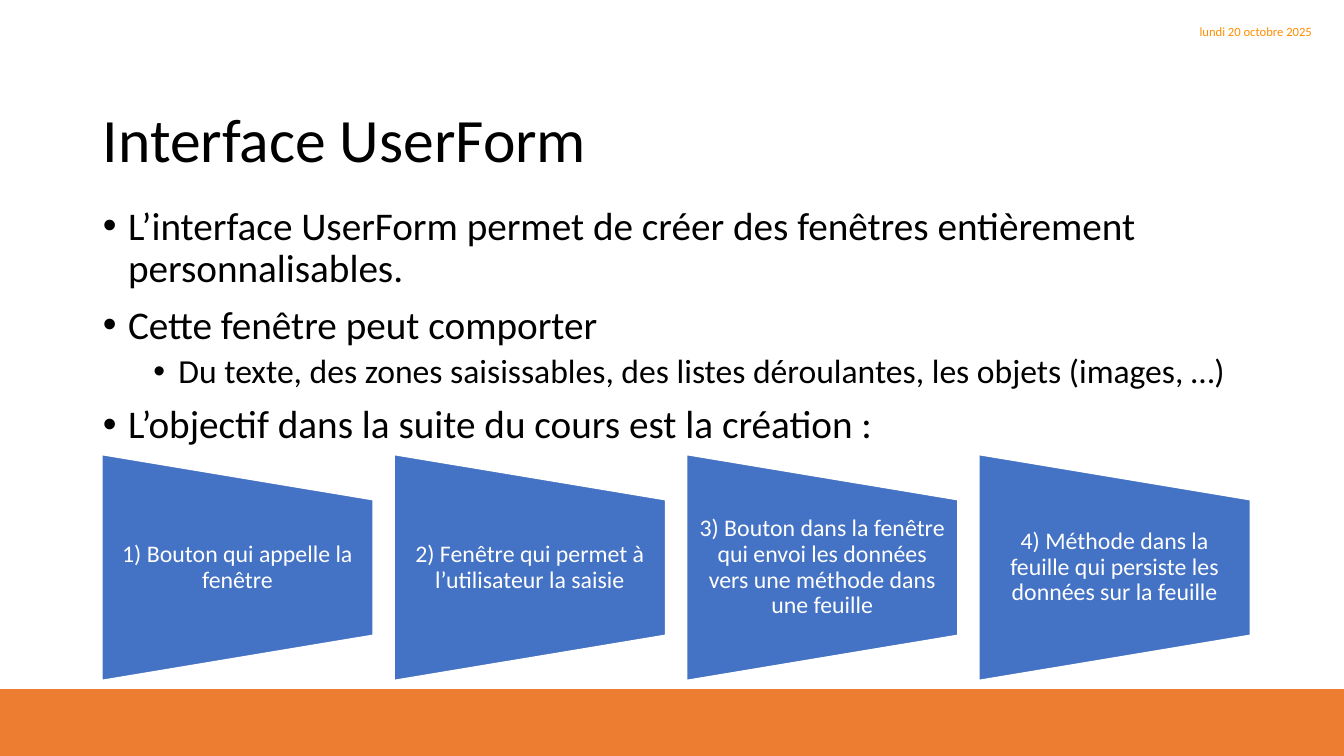
"""Build the UserForm interface slide with its bullet list and four process steps."""
from dataclasses import dataclass
from typing import Optional

import lxml.etree
import pptx
import pptx.dml.color
import pptx.enum.shapes
import pptx.enum.text
import pptx.oxml.ns
import pptx.util

Inches = pptx.util.Inches
Align = pptx.enum.text.PP_ALIGN
Anchor = pptx.enum.text.MSO_ANCHOR
Shapes = pptx.enum.shapes.MSO_SHAPE

COLORS = {
    "band": "ED7D31",
    "date": "FF8E01",
    "text": "000000",
    "step": "4472C4",
    "white": "FFFFFF",
}
FONT = "Calibri"
MARGIN = 0.92
CONTENT_WIDTH = 11.5
STEP_LENGTH, STEP_HEIGHT = 2.69, 2.24
STEP_LEFT, STEP_TOP, STEP_PITCH = 1.01, 4.51, 2.9
LABEL_TOP, LABEL_HEIGHT = 4.95, 1.36


@dataclass
class Bullet:
    """A list entry with its level, size and spacing."""
    text: str
    level: int = 0
    size: int = 28
    space_before: int = 10


@dataclass
class Style:
    """How the text of a box looks."""
    size: int
    color: str
    align: Align = Align.LEFT
    line_spacing: Optional[float] = 0.9


BULLETS = [
    Bullet("L’interface UserForm permet de créer des fenêtres entièrement personnalisables.",
           space_before=0),
    Bullet("Cette fenêtre peut comporter"),
    Bullet("Du texte, des zones saisissables, des listes déroulantes, les objets (images, …)",
           1, 24, 5),
    Bullet("L’objectif dans la suite du cours est la création :"),
]
STEPS = [
    "1) Bouton qui appelle la fenêtre",
    "2) Fenêtre qui permet à l’utilisateur la saisie",
    "3) Bouton dans la fenêtre qui envoi les données vers une méthode dans une feuille",
    "4) Méthode dans la feuille qui persiste les données sur la feuille",
]


def rgb(name: str) -> pptx.dml.color.RGBColor:
    """Return the named colour."""
    return pptx.dml.color.RGBColor.from_string(COLORS[name])


def place(shape, left: float, top: float, width: float, height: float) -> None:
    """Move and size a shape, in inches."""
    shape.left, shape.top = Inches(left), Inches(top)
    shape.width, shape.height = Inches(width), Inches(height)


def style_paragraph(paragraph, style: Style) -> None:
    """Format a paragraph and its runs."""
    paragraph.alignment = style.align
    paragraph.line_spacing = style.line_spacing
    for run in paragraph.runs:
        run.font.name = FONT
        run.font.size = pptx.util.Pt(style.size)
        run.font.color.rgb = rgb(style.color)


def fill_text(shape, text: str, style: Style) -> None:
    """Write one vertically centred, wrapped paragraph into a shape."""
    frame = shape.text_frame
    frame.text = text
    frame.word_wrap = True
    frame.auto_size = pptx.enum.text.MSO_AUTO_SIZE.NONE
    frame.vertical_anchor = Anchor.MIDDLE
    style_paragraph(frame.paragraphs[0], style)


def add_bullet_mark(paragraph, level: int) -> None:
    """Give a paragraph a round bullet with a hanging indent."""
    properties = paragraph._p.get_or_add_pPr()
    properties.set("marL", str(Inches(0.25 + 0.5 * level)))
    properties.set("indent", str(Inches(-0.25)))
    for tag, attribute, value in (("a:buFont", "typeface", "Arial"), ("a:buChar", "char", "•")):
        mark = lxml.etree.SubElement(properties, pptx.oxml.ns.qn(tag))
        mark.set(attribute, value)


def fill_list(shape, bullets: list[Bullet]) -> None:
    """Write the bullet list into the body placeholder."""
    frame = shape.text_frame
    frame.text = "\n".join(bullet.text for bullet in bullets)
    frame.word_wrap = True
    frame.auto_size = pptx.enum.text.MSO_AUTO_SIZE.NONE
    frame.vertical_anchor = Anchor.TOP
    for paragraph, bullet in zip(frame.paragraphs, bullets):
        paragraph.level = bullet.level
        add_bullet_mark(paragraph, bullet.level)
        paragraph.space_before = pptx.util.Pt(bullet.space_before)
        style_paragraph(paragraph, Style(bullet.size, "text"))


def add_filled_shape(slide, kind: Shapes, box: tuple[float, float, float, float],
                     fill: str, line: str):
    """Add a flat preset shape."""
    shape = slide.shapes.add_shape(kind, *map(Inches, box))
    shape.shadow.inherit = False
    shape.fill.solid()
    shape.fill.fore_color.rgb = rgb(fill)
    shape.line.color.rgb = rgb(line)
    shape.line.width = pptx.util.Pt(1)
    return shape


def add_step(slide, index: int, text: str) -> None:
    """Add one step: a trapezoid turned to the right and its label."""
    left = STEP_LEFT + index * STEP_PITCH
    inset = (STEP_LENGTH - STEP_HEIGHT) / 2
    box = (left + inset, STEP_TOP - inset, STEP_HEIGHT, STEP_LENGTH)
    trapezoid = add_filled_shape(slide, Shapes.FLOWCHART_MANUAL_OPERATION, box, "step", "white")
    trapezoid.rotation = 270
    label = slide.shapes.add_textbox(Inches(left), Inches(LABEL_TOP),
                                     Inches(STEP_LENGTH), Inches(LABEL_HEIGHT))
    fill_text(label, text, Style(17, "white", Align.CENTER))
    frame = label.text_frame
    frame.margin_left = frame.margin_right = Inches(0.12)
    frame.margin_top = frame.margin_bottom = 0


def main() -> None:
    """Build and save the presentation."""
    presentation = pptx.Presentation()
    presentation.slide_width, presentation.slide_height = Inches(13.33), Inches(7.5)
    slide = presentation.slides.add_slide(presentation.slide_layouts[1])

    title, body = slide.shapes.title, slide.placeholders[1]
    place(title, MARGIN, 0.98, CONTENT_WIDTH, 0.87)
    fill_text(title, "Interface UserForm", Style(44, "text"))
    place(body, MARGIN, 2, CONTENT_WIDTH, 4.76)
    fill_list(body, BULLETS)

    add_filled_shape(slide, Shapes.RECTANGLE, (0, 6.84, 13.33, 0.66), "band", "band")
    date = slide.shapes.add_textbox(Inches(11.3), Inches(0.21), Inches(1.81), Inches(0.21))
    fill_text(date, "lundi 20 octobre 2025", Style(9, "date", Align.RIGHT, None))
    for index, text in enumerate(STEPS):
        add_step(slide, index, text)

    presentation.save("out.pptx")


if __name__ == "__main__":
    main()
